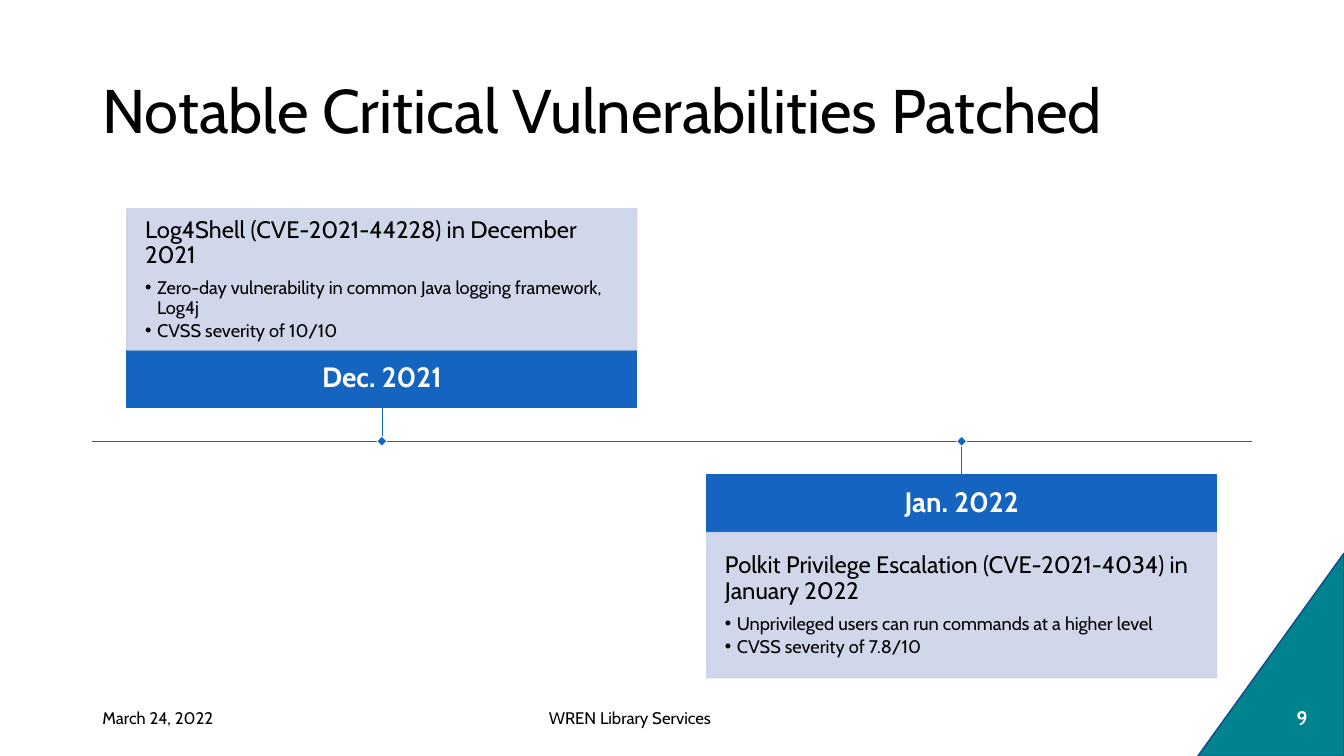
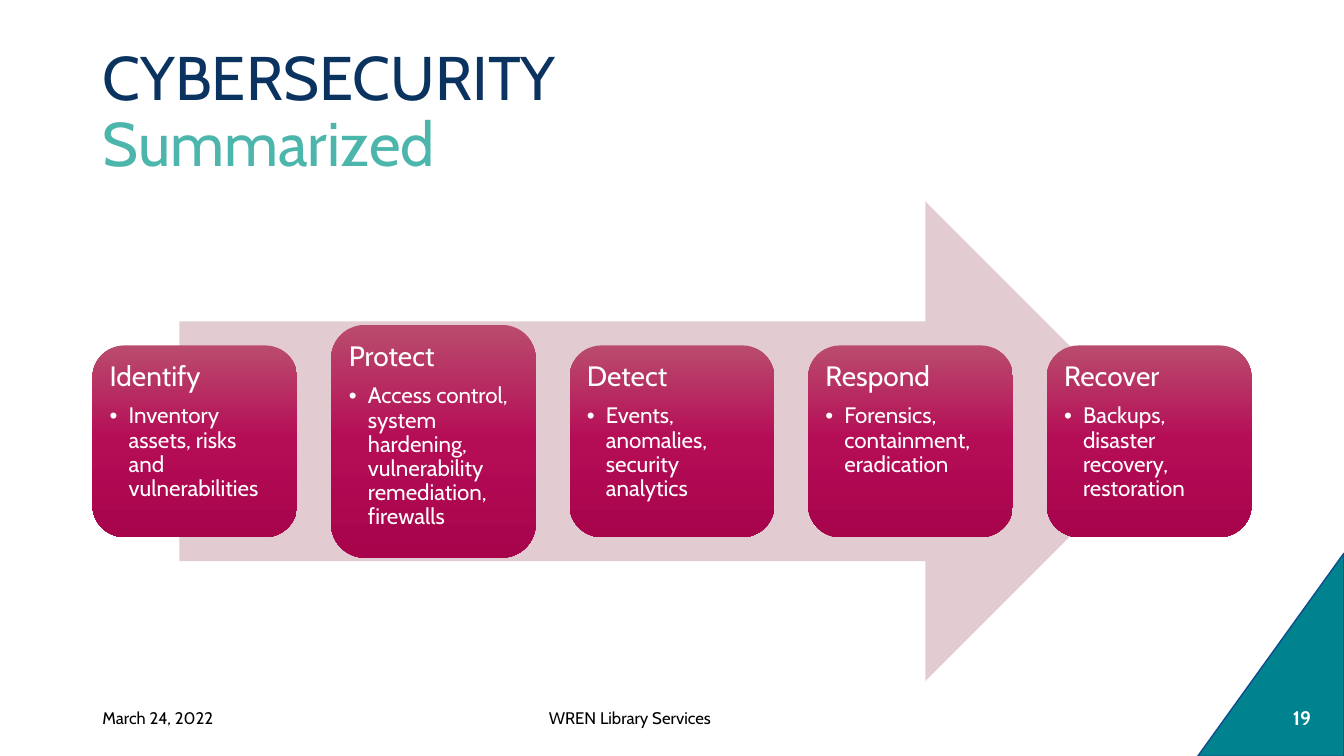
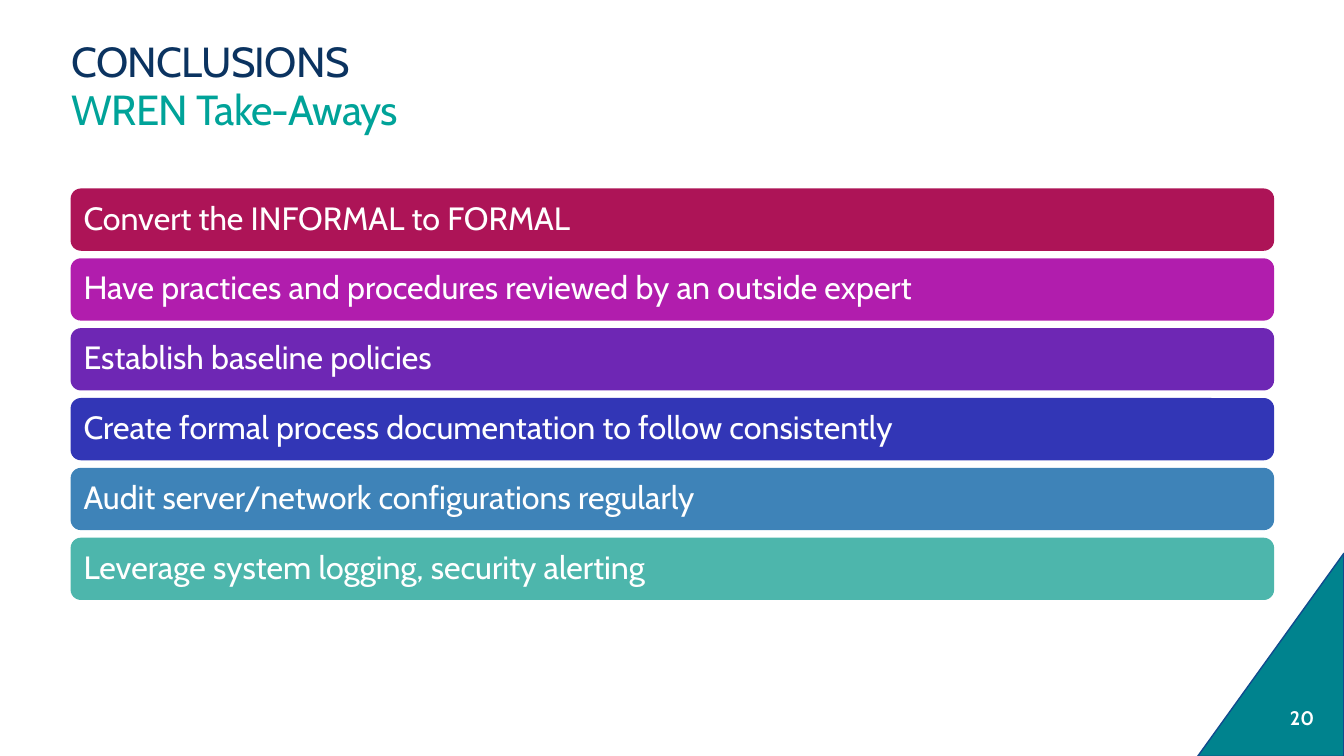
from dataclasses import dataclass
from typing import Any, NamedTuple, Optional

from lxml import etree
from pptx import Presentation
from pptx import util as u
from pptx.dml import color as dml_color
from pptx.enum import shapes, text
from pptx.oxml import ns

Kind = shapes.MSO_SHAPE
Align = text.PP_ALIGN
Anchor = text.MSO_ANCHOR


# Theme: every colour and type size
@dataclass(frozen=True)
class Theme:
    font: str = "Cabin"
    black: str = "000000"
    white: str = "FFFFFF"
    navy: str = "0B3360"
    mint: str = "4DB6AC"
    green: str = "00A399"
    corner: str = "00838E"
    corner_edge: str = "104B8E"
    blue: str = "1565C0"
    pale_blue: str = "CCD3E8"
    arrow: str = "E3CCD1"
    stage_gradient: tuple = ("B94C6D", "B50C56", "A7044C")
    bars: tuple = ("AD1457", "B11DAD", "6E27B4", "3236B6", "3E83B8", "4DB6AC")
    title: int = 44
    small_title: int = 30
    bar: int = 23
    heading: int = 20
    card_heading: int = 17
    stage_bullet: int = 16
    number: int = 14
    card_bullet: int = 13
    footer: int = 12


THEME = Theme()
ORGANISATION = "WREN Library Services"
DATE = "March 24, 2022"
HEADING_GAP = 0.42  # space after, as a share of the type size
BULLET_GAP = 0.18


class Box(NamedTuple):
    """A frame in centimetres."""
    left: float
    top: float
    width: float
    height: float

    def lengths(self) -> tuple:
        return tuple(u.Cm(value) for value in self)


class Insets(NamedTuple):
    left: float = 0.25
    top: float = 0.13
    right: float = 0.25
    bottom: float = 0.13


@dataclass(frozen=True)
class Line:
    """One paragraph with a single format."""
    words: str
    size: int
    color: str
    bold: bool = False
    alignment: Any = Align.LEFT
    spacing: Any = 0.9
    before: float = 0
    after: float = 0
    hanging: float = 0
    tracking: float = 0


@dataclass(frozen=True)
class Event:
    date: str
    left: float
    body_height: float
    above: bool
    heading: str
    bullets: tuple


@dataclass(frozen=True)
class Stage:
    name: str
    bullet: str
    height: float = 4.83


TITLE_BOX = Box(2.33, 1.02, 29.21, 3.68)


# Shared helpers
def apply(target: Any, values: dict) -> None:
    for name, value in values.items():
        setattr(target, name, value)


def rgb(value: str) -> dml_color.RGBColor:
    return dml_color.RGBColor.from_string(value)


def add_child(parent: Any, tag: str, **attributes: str) -> Any:
    return etree.SubElement(parent, ns.qn(tag), attributes)


def write(frame: Any, lines: list, insets: Insets = Insets(),
          anchor: Any = Anchor.MIDDLE) -> None:
    apply(frame, {
        "word_wrap": True, "auto_size": text.MSO_AUTO_SIZE.NONE,
        "vertical_anchor": anchor,
        **{f"margin_{side}": u.Cm(value)
           for side, value in insets._asdict().items()},
    })
    for index, line in enumerate(lines):
        paragraph = frame.add_paragraph() if index else frame.paragraphs[0]
        apply(paragraph, {
            "alignment": line.alignment, "line_spacing": line.spacing,
            "space_before": u.Pt(line.before), "space_after": u.Pt(line.after),
        })
        run = paragraph.add_run()
        run.text = line.words
        apply(run.font, {"name": THEME.font, "size": u.Pt(line.size),
                         "bold": line.bold})
        run.font.color.rgb = rgb(line.color)
        if line.tracking:
            run.font._element.set("spc", str(round(line.tracking * 100)))
        if line.hanging:
            properties = paragraph._p.get_or_add_pPr()
            indent = u.Cm(line.hanging)
            properties.set("marL", str(indent))
            properties.set("indent", str(-indent))
            add_child(properties, "a:buFont", typeface="Arial")
            add_child(properties, "a:buChar", char="•")


def add_shape(slide: Any, kind: Any, box: Box, fill: Optional[str] = None,
              edge: Optional[str] = None, edge_width: float = 1,
              rotation: float = 0) -> Any:
    shape = slide.shapes.add_shape(kind, *box.lengths())
    shape.shadow.inherit = False
    shape.rotation = rotation
    if fill:
        shape.fill.solid()
        shape.fill.fore_color.rgb = rgb(fill)
    if edge:
        shape.line.color.rgb = rgb(edge)
        shape.line.width = u.Pt(edge_width)
    else:
        shape.line.fill.background()
    return shape


def set_opacity(shape: Any, percent: int) -> None:
    for node in shape.element.spPr.iter(ns.qn("a:srgbClr")):
        add_child(node, "a:alpha", val=str(percent * 1000))


def set_gradient(shape: Any, colors: tuple) -> None:
    """Spread the colours evenly from top to bottom."""
    shape.fill.gradient()
    gradient = shape.element.spPr.find(ns.qn("a:gradFill"))
    for child in list(gradient):
        gradient.remove(child)
    stops = add_child(gradient, "a:gsLst")
    for index, value in enumerate(colors):
        position = index * 100000 // (len(colors) - 1)
        stop = add_child(stops, "a:gs", pos=str(position))
        add_child(stop, "a:srgbClr", val=value)
    add_child(gradient, "a:lin", ang="5400000", scaled="0")


def add_line(slide: Any, start: tuple, end: tuple, width: float) -> None:
    points = (u.Cm(value) for value in (*start, *end))
    line = slide.shapes.add_connector(shapes.MSO_CONNECTOR.STRAIGHT, *points)
    line.line.color.rgb = rgb(THEME.blue)
    line.line.width = u.Pt(width)
    add_child(line.element.spPr, "a:effectLst")


def add_label(slide: Any, box: Box, line: Line) -> None:
    write(slide.shapes.add_textbox(*box.lengths()).text_frame, [line])


def add_slide(presentation: Any, number: int, title: list,
              title_box: Box = TITLE_BOX, title_insets: Insets = Insets(),
              footer: bool = True) -> Any:
    """Add a slide with its title, corner, page number and footer."""
    slide = presentation.slides.add_slide(presentation.slide_layouts[5])
    placeholder = slide.shapes.title
    apply(placeholder, dict(zip(Box._fields, title_box.lengths())))
    write(placeholder.text_frame, title, title_insets)

    add_shape(slide, Kind.RIGHT_TRIANGLE, Box(29.47, 14.66, 5.11, 3.68),
              THEME.corner, THEME.corner_edge, rotation=270)
    add_label(slide, Box(32.08, 17.58, 1.47, 1.02),
              Line(str(number), THEME.number, THEME.white, bold=True,
                   alignment=Align.CENTER, spacing=1.0, after=6))
    if footer:
        for words, left, width, alignment in (
                (DATE, 2.33, 7.62, Align.LEFT),
                (ORGANISATION, 10.16, 11.43, Align.CENTER)):
            add_label(slide, Box(left, 17.58, width, 1.02),
                      Line(words, THEME.footer, THEME.black,
                           alignment=alignment, spacing=1.0, after=6))
    return slide


def with_bullets(heading: str, bullets: tuple, sizes: tuple, color: str,
                 hanging: float) -> list:
    heading_size, bullet_size = sizes
    return [Line(heading, heading_size, color,
                 after=heading_size * HEADING_GAP)] + [
        Line(words, bullet_size, color, after=bullet_size * BULLET_GAP,
             hanging=hanging) for words in bullets]


# Slide: timeline of patched vulnerabilities
EVENTS = (
    Event("Dec. 2021", 3.2, 3.56, True,
          "Log4Shell (CVE-2021-44228) in December 2021",
          ("Zero-day vulnerability in common Java logging framework, Log4j",
           "CVSS severity of 10/10")),
    Event("Jan. 2022", 17.81, 3.66, False,
          "Polkit Privilege Escalation (CVE-2021-4034) in January 2022",
          ("Unprivileged users can run commands at a higher level",
           "CVSS severity of 7.8/10")),
)
AXIS = 11.12
STEM = 0.85


def add_event(slide: Any, event: Event) -> None:
    width, band_height, marker = 12.85, 1.45, 0.18
    center = event.left + width / 2
    if event.above:
        stem_end = AXIS - STEM
        band_top = stem_end - band_height
        body_top = band_top - event.body_height
    else:
        stem_end = band_top = AXIS + STEM
        body_top = band_top + band_height

    band = add_shape(slide, Kind.RECTANGLE,
                     Box(event.left, band_top, width, band_height),
                     THEME.blue, THEME.blue)
    write(band.text_frame,
          [Line(event.date, THEME.heading, THEME.white, bold=True,
                alignment=Align.CENTER, after=THEME.heading * HEADING_GAP)],
          Insets(0.28, 0.28, 0.28, 0.28))

    body = add_shape(slide, Kind.RECTANGLE,
                     Box(event.left, body_top, width, event.body_height),
                     THEME.pale_blue, THEME.pale_blue)
    set_opacity(body, 90)
    write(body.text_frame,
          with_bullets(event.heading, event.bullets,
                       (THEME.card_heading, THEME.card_bullet),
                       THEME.black, 0.3),
          Insets(0.46, 0.46, 0.46, 0.46))

    add_line(slide, (center, stem_end), (center, AXIS), 0.5)
    add_shape(slide, Kind.RECTANGLE,
              Box(center - marker / 2, AXIS - marker / 2, marker, marker),
              THEME.blue, THEME.white, 0.5, rotation=45)


def build_timeline(presentation: Any) -> None:
    slide = add_slide(presentation, 9, [
        Line("Notable Critical Vulnerabilities Patched", THEME.title,
             THEME.black)])
    add_line(slide, (TITLE_BOX.left, AXIS),
             (TITLE_BOX.left + TITLE_BOX.width, AXIS), 1)
    for event in EVENTS:
        add_event(slide, event)


# Slide: stages along an arrow
STAGES = (
    Stage("Identify", "Inventory assets, risks and vulnerabilities"),
    Stage("Protect", "Access control, system hardening, vulnerability "
                     "remediation, firewalls", 5.87),
    Stage("Detect", "Events, anomalies, security analytics"),
    Stage("Respond", "Forensics, containment, eradication"),
    Stage("Recover", "Backups, disaster recovery, restoration"),
)


def build_stages(presentation: Any) -> None:
    slide = add_slide(presentation, 19, [
        Line("CYBERSECURITY", THEME.title, THEME.navy),
        Line("Summarized", THEME.title, THEME.mint)])
    add_shape(slide, Kind.RIGHT_ARROW, Box(4.52, 5.08, 24.84, 12.08),
              THEME.arrow)
    width = 5.16
    pitch = (TITLE_BOX.width - width) / (len(STAGES) - 1)
    for index, stage in enumerate(STAGES):
        box = Box(TITLE_BOX.left + index * pitch, AXIS - stage.height / 2,
                  width, stage.height)
        card = add_shape(slide, Kind.ROUNDED_RECTANGLE, box)
        set_gradient(card, THEME.stage_gradient)
        write(card.text_frame,
              with_bullets(stage.name, (stage.bullet,),
                           (THEME.heading, THEME.stage_bullet),
                           THEME.white, 0.48),
              Insets(0.2, 0.2, 0.3, 0.2), Anchor.TOP)


# Slide: conclusions as coloured bars
CONCLUSIONS = (
    "Convert the INFORMAL to FORMAL",
    "Have practices and procedures reviewed by an outside expert",
    "Establish baseline policies",
    "Create formal process documentation to follow consistently",
    "Audit server/network configurations regularly",
    "Leverage system logging, security alerting",
)


def build_conclusions(presentation: Any) -> None:
    left, width, pitch = 1.78, 30.33, 1.76
    leading = u.Pt(34.2)
    slide = add_slide(presentation, 20, [
        Line("CONCLUSIONS", THEME.small_title, THEME.navy, spacing=leading,
             before=0.7, tracking=-0.5),
        Line("WREN Take-Aways", THEME.small_title, THEME.green,
             spacing=leading, tracking=-0.6),
    ], Box(left, 0.94, width, 2.44), Insets(0.03, 0.03, 0, 0), footer=False)
    for index, (words, fill) in enumerate(zip(CONCLUSIONS, THEME.bars)):
        bar = add_shape(slide, Kind.ROUNDED_RECTANGLE,
                        Box(left, 4.75 + index * pitch, width, 1.57), fill)
        write(bar.text_frame,
              [Line(words, THEME.bar, THEME.white,
                    after=THEME.bar * HEADING_GAP)],
              Insets(0.25, 0.25, 0.25, 0.25))


def main() -> None:
    presentation = Presentation()
    apply(presentation, {"slide_width": u.Cm(33.87),
                         "slide_height": u.Cm(19.05)})
    build_timeline(presentation)
    build_stages(presentation)
    build_conclusions(presentation)
    presentation.save("out.pptx")


if __name__ == "__main__":
    main()
